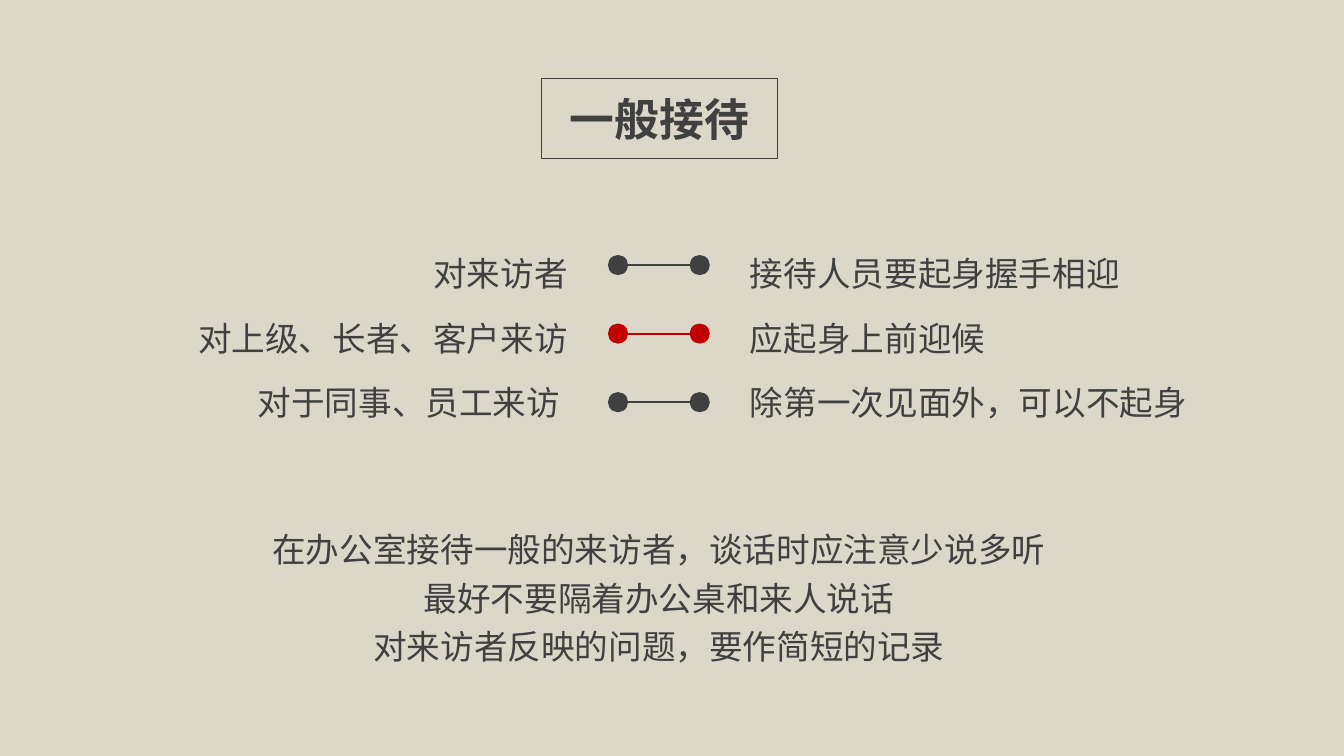
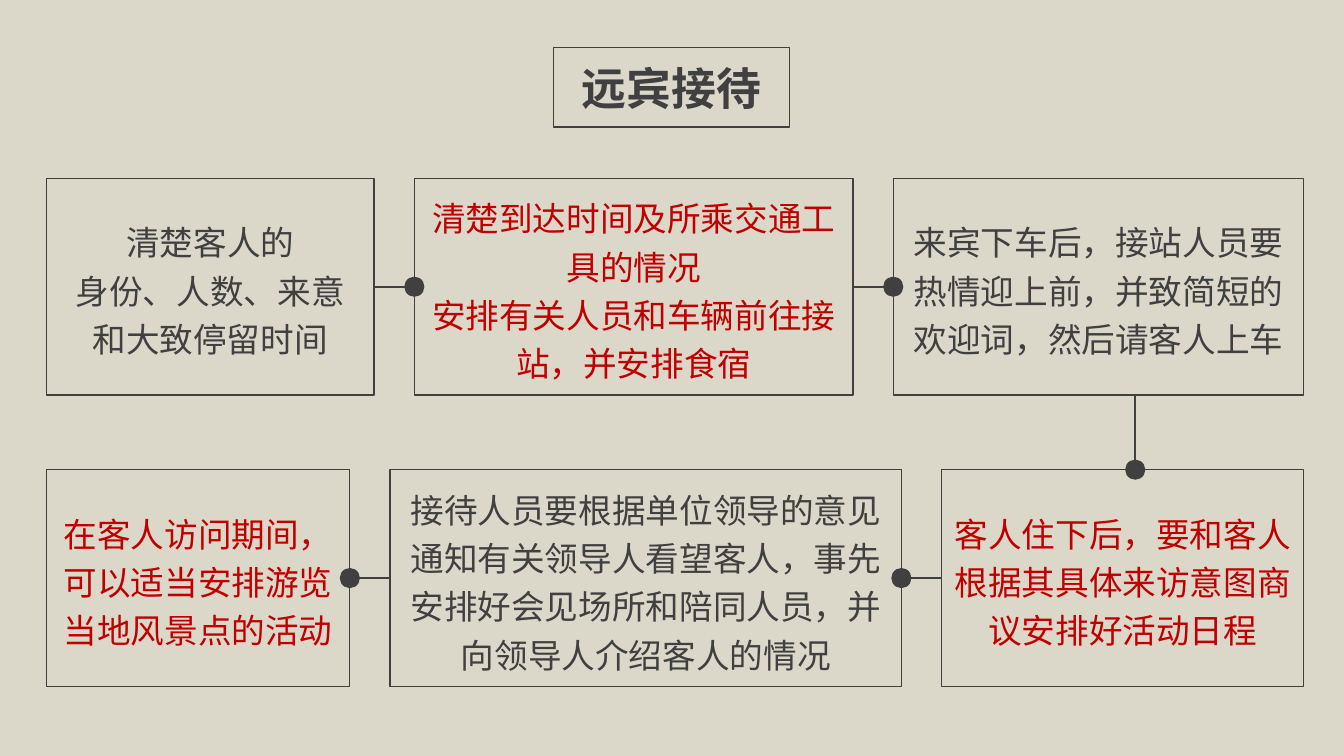
from lxml.etree import SubElement
from pptx import Presentation
from pptx.dml.color import RGBColor
from pptx.enum.shapes import MSO_CONNECTOR, MSO_SHAPE
from pptx.enum.text import MSO_ANCHOR, MSO_AUTO_SIZE, PP_ALIGN
from pptx.oxml.ns import qn
from pptx.util import Inches, Pt

SAND = RGBColor(0xDB, 0xD8, 0xCA)
GREY = RGBColor(0x40, 0x40, 0x40)
RED = RGBColor(0xC0, 0x00, 0x00)
FONT = "Noto Sans CJK SC"
DOT = 0.2
TOP, BOTTOM, LEFT, RIGHT = 0, 2, 1, 3

# Flow boxes
EDGE, GAP, TALL = 0.46, 0.4, 2.15
ROWS = [
    (1.77, [
        (3.25, GREY, ["清楚客人的", "身份、人数、来意", "和大致停留时间"]),
        (4.35, RED, ["清楚到达时间及所乘交通工具的情况",
                     "安排有关人员和车辆前往接站，并安排食宿"]),
        (4.07, GREY, ["来宾下车后，接站人员要热情迎上前，并致简短的欢迎词，然后请客人上车"]),
    ]),
    (4.66, [
        (3.01, RED, ["在客人访问期间，可以适当安排游览当地风景点的活动"]),
        (5.07, GREY, ["接待人员要根据单位领导的意见通知有关领导人看望客人，"
                      "事先安排好会见场所和陪同人员，并向领导人介绍客人的情况"]),
        (3.59, RED, ["客人住下后，要和客人根据其具体来访意图商议安排好活动日程"]),
    ]),
]


def write(frame, lines, color=GREY, align=PP_ALIGN.CENTER, space=1.2,
          size=24, bold=False):
    """Fill a text frame with one paragraph per line."""
    frame.text = "\n".join(lines)
    for para in frame.paragraphs:
        para.alignment = align
        para.line_spacing = space
        font = para.font
        font.size, font.bold, font.name = Pt(size), bold, FONT
        font.color.rgb = color
        # The East Asian typeface has no public setter.
        props = para._p.pPr.find(qn("a:defRPr"))
        SubElement(props, qn("a:ea"), typeface=FONT)


def add_slide(deck, title, left, top):
    """Add a slide with its framed title."""
    slide = deck.slides.add_slide(deck.slide_layouts[5])
    head = slide.shapes.title
    head.left, head.top = Inches(left), Inches(top)
    head.width, head.height = Inches(2.34), Inches(0.79)
    head.line.color.rgb, head.line.width = GREY, Pt(1)
    frame = head.text_frame
    frame.auto_size = MSO_AUTO_SIZE.NONE
    frame.vertical_anchor = MSO_ANCHOR.MIDDLE
    write(frame, [title], space=1.0, size=32, bold=True)
    return slide


def add_text(slide, left, top, width, height, lines, align, space):
    box = slide.shapes.add_textbox(
        Inches(left), Inches(top), Inches(width), Inches(height))
    frame = box.text_frame
    frame.word_wrap = False
    frame.auto_size = MSO_AUTO_SIZE.SHAPE_TO_FIT_TEXT
    write(frame, lines, align=align, space=space)


def add_box(slide, left, top, width, color, lines):
    box = slide.shapes.add_shape(
        MSO_SHAPE.RECTANGLE, Inches(left), Inches(top), Inches(width), Inches(TALL))
    box.shadow.inherit = False
    box.fill.background()
    box.line.color.rgb, box.line.width = GREY, Pt(1)
    box.text_frame.word_wrap = True
    box.text_frame.vertical_anchor = MSO_ANCHOR.MIDDLE
    write(box.text_frame, lines, color)
    return box


def add_dot(slide, x, y, color=GREY):
    """Add a dot centred on a point given in EMU."""
    size = Inches(DOT)
    dot = slide.shapes.add_shape(
        MSO_SHAPE.OVAL, x - size // 2, y - size // 2, size, size)
    dot.shadow.inherit = False
    dot.fill.solid()
    dot.fill.fore_color.rgb = color
    dot.line.fill.background()


def add_line(slide, x1, y1, x2, y2, color=GREY):
    line = slide.shapes.add_connector(MSO_CONNECTOR.STRAIGHT, x1, y1, x2, y2)
    line.line.color.rgb, line.line.width = color, Pt(1.5)
    SubElement(line._element.spPr, qn("a:effectLst"))
    return line


def link(slide, start, side, end, goal):
    """Join two boxes side to side, with a dot at the end."""
    line = add_line(slide, 0, 0, 0, 0)
    line.begin_connect(start, side)
    line.end_connect(end, goal)
    add_dot(slide, line.end_x, line.end_y)


def add_row(slide, top, cells):
    left, boxes = EDGE, []
    for width, color, lines in cells:
        boxes.append(add_box(slide, left, top, width, color, lines))
        left += width + GAP
    return boxes


def add_guests(deck):
    slide = add_slide(deck, "一般接待", 5.37, 0.78)
    add_text(slide, 1.86, 2.22, 3.87, 2.02,
             ["对来访者", "对上级、长者、客户来访", "对于同事、员工来访 "],
             PP_ALIGN.RIGHT, 1.6)
    add_text(slide, 7.34, 2.22, 4.53, 2.02,
             ["接待人员要起身握手相迎", "应起身上前迎候", "除第一次见面外，可以不起身"],
             PP_ALIGN.LEFT, 1.6)
    ends = Inches(6.13), Inches(6.94)
    for row, color in enumerate((GREY, RED, GREY)):
        y = Inches(2.63 + 0.68 * row)
        add_line(slide, ends[0], y, ends[1], y, color)
        for x in ends:
            add_dot(slide, x, y, color)
    add_text(slide, 2.6, 5.12, 7.87, 1.54,
             ["在办公室接待一般的来访者，谈话时应注意少说多听",
              "最好不要隔着办公桌和来人说话",
              "对来访者反映的问题，要作简短的记录"],
             PP_ALIGN.CENTER, 1.2)


def add_flow(deck):
    slide = add_slide(deck, "远宾接待", 5.49, 0.47)
    upper, lower = [add_row(slide, top, cells) for top, cells in ROWS]
    for start, end in zip(upper, upper[1:]):
        link(slide, start, RIGHT, end, LEFT)
    x, start, end = Inches(11.26), upper[-1], lower[-1]
    add_line(slide, x, start.top + start.height, x, end.top)
    add_dot(slide, x, end.top)
    for end, start in zip(lower, lower[1:]):
        link(slide, start, LEFT, end, RIGHT)


def main():
    deck = Presentation()
    deck.slide_width, deck.slide_height = Inches(13.33), Inches(7.5)
    fill = deck.slide_master.background.fill
    fill.solid()
    fill.fore_color.rgb = SAND
    add_guests(deck)
    add_flow(deck)
    deck.save("out.pptx")


if __name__ == "__main__":
    main()
